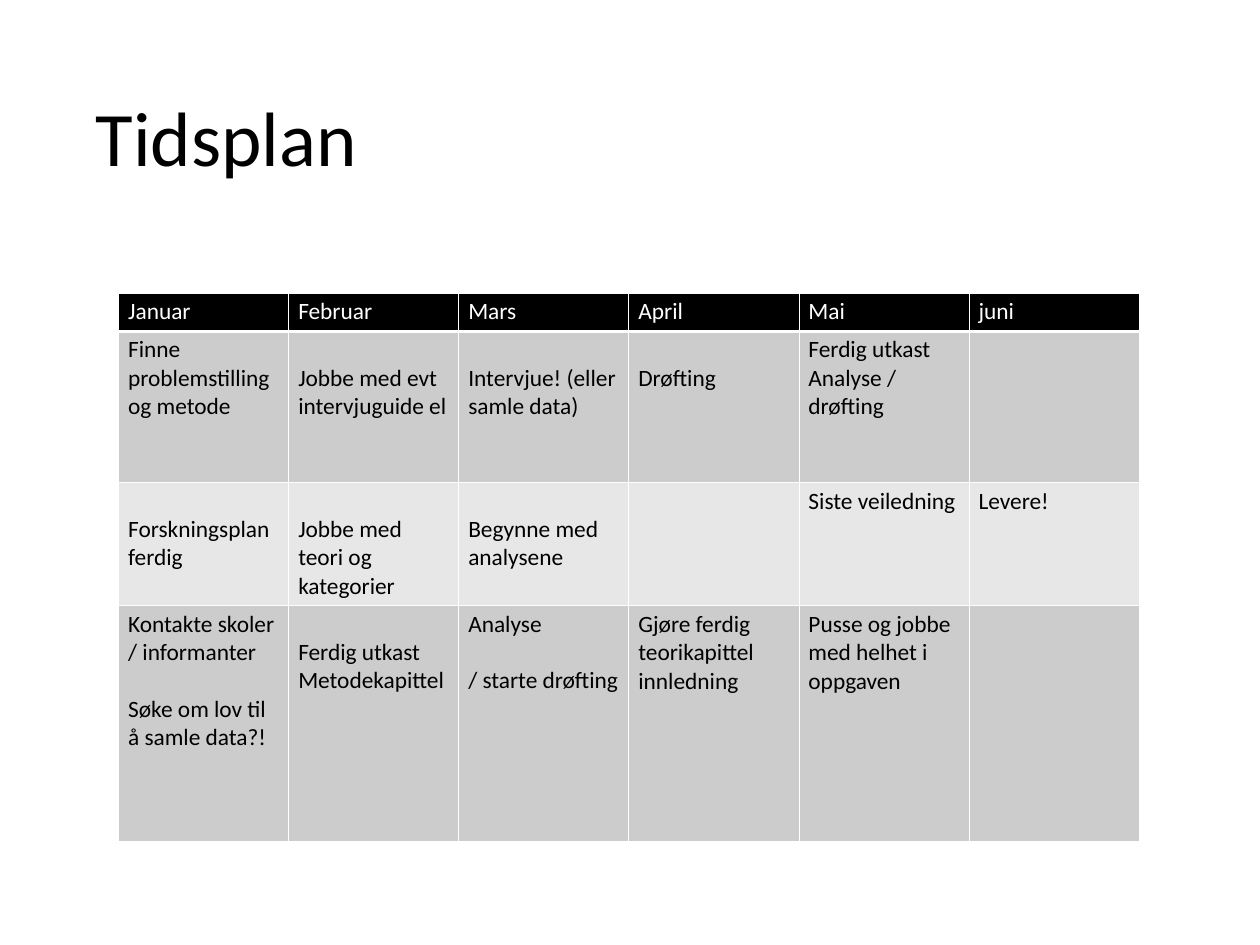
"""Build a slide with a thesis timetable from January to June."""
from dataclasses import dataclass

from lxml import etree
from pptx import Presentation, util as u
from pptx.dml.color import RGBColor
from pptx.enum import text
from pptx.oxml import ns

BLACK = RGBColor(0x00, 0x00, 0x00)
WHITE = RGBColor(0xFF, 0xFF, 0xFF)
DARK_BAND = RGBColor(0xCC, 0xCC, 0xCC)
LIGHT_BAND = RGBColor(0xE7, 0xE7, 0xE7)

FONT = "Calibri"
LINE = 23
COL_WIDTH = 138.24
INSET_X, INSET_Y = 7.7, 3.6


@dataclass(frozen=True)
class Entry:
    paragraphs: tuple[str, ...] = ()
    lead: float = 0
    gap: float = 0


@dataclass(frozen=True)
class Row:
    height: float
    fill: RGBColor
    color: RGBColor
    entries: tuple[Entry, ...]
    bottom: float = 1


MONTHS = ("Januar", "Februar", "Mars", "April", "Mai", "juni")
ROWS = (
    Row(31, BLACK, WHITE, tuple(Entry((month,)) for month in MONTHS), bottom=3),
    Row(123, DARK_BAND, BLACK, (
        Entry(("Finne problemstilling og metode",)),
        Entry(("Jobbe med evt intervjuguide el",), lead=LINE),
        Entry(("Intervjue! (eller samle data)",), lead=LINE),
        Entry(("Drøfting",), lead=LINE),
        Entry(("Ferdig utkast", "Analyse / drøfting")),
        Entry(),
    )),
    Row(100, LIGHT_BAND, BLACK, (
        Entry(("Forskningsplan", "ferdig"), lead=LINE),
        Entry(("Jobbe med teori og kategorier",), lead=LINE),
        Entry(("Begynne med analysene",), lead=LINE),
        Entry(),
        Entry(("Siste veiledning",)),
        Entry(("Levere!",)),
    )),
    Row(192, DARK_BAND, BLACK, (
        Entry(("Kontakte skoler / informanter", "Søke om lov til å samle data?!"), gap=LINE),
        Entry(("Ferdig utkast Metodekapittel",), lead=LINE),
        Entry(("Analyse", "/ starte drøfting"), gap=LINE),
        Entry(("Gjøre ferdig teorikapittel", "innledning")),
        Entry(("Pusse og jobbe med helhet i oppgaven",)),
        Entry(),
    )),
)


def set_all(target, values: dict) -> None:
    for name, value in values.items():
        setattr(target, name, value)


def add_run(p, words: str, size: float, color: RGBColor) -> None:
    r = p.add_run()
    r.text = words
    set_all(r.font, {"name": FONT, "size": u.Pt(size), "bold": False})
    r.font.color.rgb = color


def add_borders(cell, bottom: float) -> None:
    tcPr = cell._tc.get_or_add_tcPr()
    for side, width in {"L": 1, "R": 1, "T": 1, "B": bottom}.items():
        ln = etree.SubElement(tcPr, ns.qn(f"a:ln{side}"), w=str(u.Pt(width)))
        fill = etree.SubElement(ln, ns.qn("a:solidFill"))
        etree.SubElement(fill, ns.qn("a:srgbClr"), val=str(WHITE))


def fill_cell(cell, entry: Entry, row: Row) -> None:
    add_borders(cell, row.bottom)
    cell.fill.solid()
    cell.fill.fore_color.rgb = row.fill
    set_all(cell, {
        "margin_left": u.Pt(INSET_X), "margin_right": u.Pt(INSET_X),
        "margin_top": u.Pt(INSET_Y + entry.lead), "margin_bottom": u.Pt(INSET_Y),
        "vertical_anchor": text.MSO_ANCHOR.TOP,
    })
    tf = cell.text_frame
    for i, words in enumerate(entry.paragraphs):
        p = tf.add_paragraph() if i else tf.paragraphs[0]
        if i and entry.gap:
            p.space_before = u.Pt(entry.gap)
        add_run(p, words, 19, row.color)


def add_title(s) -> None:
    sp = s.shapes.title
    set_all(sp, {"left": u.Pt(70.5), "top": u.Pt(41), "width": u.Pt(883.5), "height": u.Pt(148.5)})
    tf = sp.text_frame
    set_all(tf, {
        "vertical_anchor": text.MSO_ANCHOR.MIDDLE,
        "auto_size": text.MSO_AUTO_SIZE.NONE,
        "word_wrap": True,
    })
    p = tf.paragraphs[0]
    set_all(p, {"alignment": text.PP_ALIGN.LEFT, "line_spacing": 0.9})
    add_run(p, "Tidsplan", 62.6, BLACK)


def add_timetable(s) -> None:
    height = sum(row.height for row in ROWS)
    table = s.shapes.add_table(
        len(ROWS), len(MONTHS), u.Pt(96.5), u.Pt(238.3),
        u.Pt(COL_WIDTH * len(MONTHS)), u.Pt(height),
    ).table
    table.horz_banding = False
    for column in table.columns:
        column.width = u.Pt(COL_WIDTH)
    for i, row in enumerate(ROWS):
        table.rows[i].height = u.Pt(row.height)
        for j, entry in enumerate(row.entries):
            fill_cell(table.cell(i, j), entry, row)


def main() -> None:
    prs = Presentation()
    set_all(prs, {"slide_width": u.Pt(1024), "slide_height": u.Pt(768)})
    s = prs.slides.add_slide(prs.slide_layouts[5])
    add_title(s)
    add_timetable(s)
    prs.save("out.pptx")


if __name__ == "__main__":
    main()
